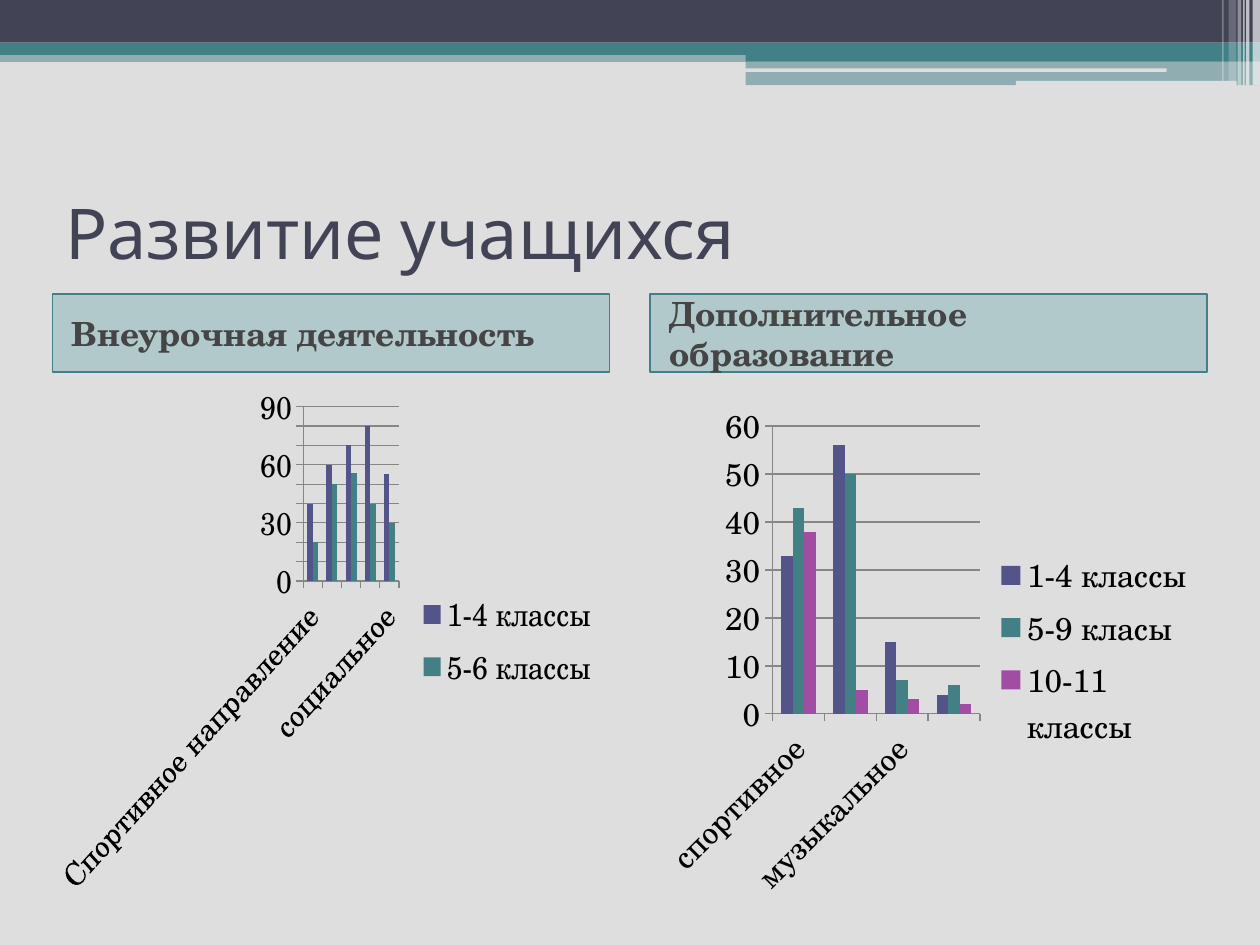
from lxml.etree import SubElement
from pptx import Presentation
from pptx.chart.data import CategoryChartData
from pptx.dml.color import RGBColor
from pptx.enum.chart import XL_CHART_TYPE, XL_LEGEND_POSITION, XL_TICK_MARK
from pptx.enum.shapes import MSO_SHAPE
from pptx.enum.text import MSO_ANCHOR, MSO_AUTO_SIZE, PP_ALIGN
from pptx.oxml.ns import qn
from pptx.util import Cm, Pt

BACKGROUND = RGBColor(0xDE, 0xDE, 0xDE)
NAVY = RGBColor(0x42, 0x44, 0x56)
TEAL = RGBColor(0x43, 0x80, 0x86)
CYAN = RGBColor(0x32, 0x8E, 0x97)
INDIGO = RGBColor(0x53, 0x54, 0x8A)
PURPLE = RGBColor(0xA0, 0x4D, 0xA3)
GRAY = RGBColor(0x45, 0x45, 0x45)
AXIS_GRAY = RGBColor(0x86, 0x86, 0x86)
WHITE = RGBColor(0xFF, 0xFF, 0xFF)
BLACK = RGBColor(0, 0, 0)
TITLE_FONT = "Karla"
BODY_FONT = "TeX Gyre Schola"


def paint(shape, color, opacity=100):
    shape.fill.solid()
    shape.fill.fore_color.rgb = color
    if opacity < 100:
        srgb = shape.fill._xPr.find(qn("a:solidFill"))[0]
        SubElement(srgb, qn("a:alpha"), val=str(opacity * 1000))


def write(placeholder, text, font, size, color, bold):
    frame = placeholder.text_frame
    frame.word_wrap = True
    frame.auto_size = MSO_AUTO_SIZE.NONE
    frame.vertical_anchor = MSO_ANCHOR.MIDDLE
    paragraph = frame.paragraphs[0]
    paragraph.alignment = PP_ALIGN.LEFT
    run = paragraph.add_run()
    run.text = text
    run.font.name = font
    run.font.size = Pt(size)
    run.font.bold = bold
    run.font.color.rgb = color
    return paragraph


presentation = Presentation()
presentation.slide_width = Cm(25.4)
presentation.slide_height = Cm(19.05)
slide = presentation.slides.add_slide(presentation.slide_layouts[4])
slide.background.fill.solid()
slide.background.fill.fore_color.rgb = BACKGROUND

RECT, ROUND = MSO_SHAPE.RECTANGLE, MSO_SHAPE.ROUNDED_RECTANGLE
banner = [
    (RECT, 0, 1.02, 25.4, 0.23, TEAL, 50),
    (RECT, 0, 0, 25.4, 0.86, NAVY, 100),
    (RECT, 0, 0.86, 25.4, 0.25, TEAL, 100),
    (RECT, 15.03, 0.99, 10.37, 0.25, TEAL, 100),
    (RECT, 15.03, 1.24, 10.37, 0.48, TEAL, 50),
    (ROUND, 15.02, 1.38, 8.5, 0.07, BACKGROUND, 100),
    (ROUND, 20.48, 1.63, 4.45, 0.1, BACKGROUND, 100),
    (RECT, 25.25, 0, 0.15, 1.72, WHITE, 65),
    (RECT, 25.12, 0, 0.07, 1.72, WHITE, 65),
    (RECT, 25.06, 0, 0.03, 1.72, WHITE, 60),
    (RECT, 24.95, 0, 0.07, 1.72, WHITE, 40),
    (RECT, 24.77, 0, 0.15, 1.63, WHITE, 20),
    (RECT, 24.64, 0, 0.03, 1.63, WHITE, 30),
]
for preset, left, top, width, height, color, opacity in banner:
    stripe = slide.shapes.add_shape(preset, Cm(left), Cm(top), Cm(width), Cm(height))
    stripe.shadow.inherit = False
    stripe.line.fill.background()
    paint(stripe, color, opacity)

title = slide.shapes.title
title.left, title.top, title.width, title.height = Cm(1.06), Cm(3.18), Cm(23.28), Cm(2.96)
write(title, "Развитие учащихся", TITLE_FONT, 40, NAVY, False)

columns = [
    (1, 1.06, "Внеурочная деятельность", 7.52, 90,
     ["Спортивное направление", "общекультурное", "общеинтеллектуальное",
      "духовно-нравственное", "социальное"],
     [("1-4 классы", [40, 60, 70, 80, 55], INDIGO),
      ("5-6 классы", [20, 50, 56, 40, 30], TEAL)]),
    (3, 13.11, "Дополнительное образование", 7.92, 60,
     ["спортивное", "эстетическое", "музыкальное", "техническое"],
     [("1-4 классы", [33, 56, 15, 4], INDIGO),
      ("5-9 класы", [43, 50, 7, 6], TEAL),
      ("10-11 классы", [38, 5, 3, 2], PURPLE)]),
]
COLUMN_WIDTH = 11.23
CHART_BOTTOM = 18.31

placeholders = {item.placeholder_format.idx: item for item in slide.placeholders}
for index, left, text, chart_top, maximum, categories, groups in columns:
    heading = placeholders[index]
    heading.left, heading.top = Cm(left), Cm(5.93)
    heading.width, heading.height = Cm(COLUMN_WIDTH), Cm(1.57)
    paint(heading, CYAN, 25)
    heading.line.color.rgb = TEAL
    heading.line.width = Pt(1)
    paragraph = write(heading, text, BODY_FONT, 19, GRAY, True)
    paragraph.space_before = Pt(3)
    properties = paragraph._p.get_or_add_pPr()
    properties.set("marL", str(Cm(0.13)))
    properties.set("indent", "0")

    content = placeholders[index + 1]._element
    content.getparent().remove(content)

    data = CategoryChartData()
    data.categories = categories
    for name, values, color in groups:
        data.add_series(name, values)
    chart = slide.shapes.add_chart(
        XL_CHART_TYPE.COLUMN_CLUSTERED, Cm(left), Cm(chart_top),
        Cm(COLUMN_WIDTH), Cm(CHART_BOTTOM - chart_top), data).chart
    chart.has_title = False
    chart.font.name = BODY_FONT
    chart.font.size = Pt(18)
    chart.font.color.rgb = BLACK
    chart.has_legend = True
    chart.legend.position = XL_LEGEND_POSITION.RIGHT
    chart.legend.include_in_layout = False
    plot = chart.plots[0]
    plot.gap_width = 150
    plot.vary_by_categories = False
    for series, (name, values, color) in zip(plot.series, groups):
        paint(series.format, color)
    for axis in (chart.category_axis, chart.value_axis):
        axis.major_tick_mark = XL_TICK_MARK.OUTSIDE
        axis.minor_tick_mark = XL_TICK_MARK.NONE
        axis.format.line.color.rgb = AXIS_GRAY
    chart.value_axis.minimum_scale = 0
    chart.value_axis.maximum_scale = maximum
    chart.value_axis.major_unit = 10
    chart.value_axis.has_major_gridlines = True
    chart.value_axis.major_gridlines.format.line.color.rgb = AXIS_GRAY

presentation.save("out.pptx")
